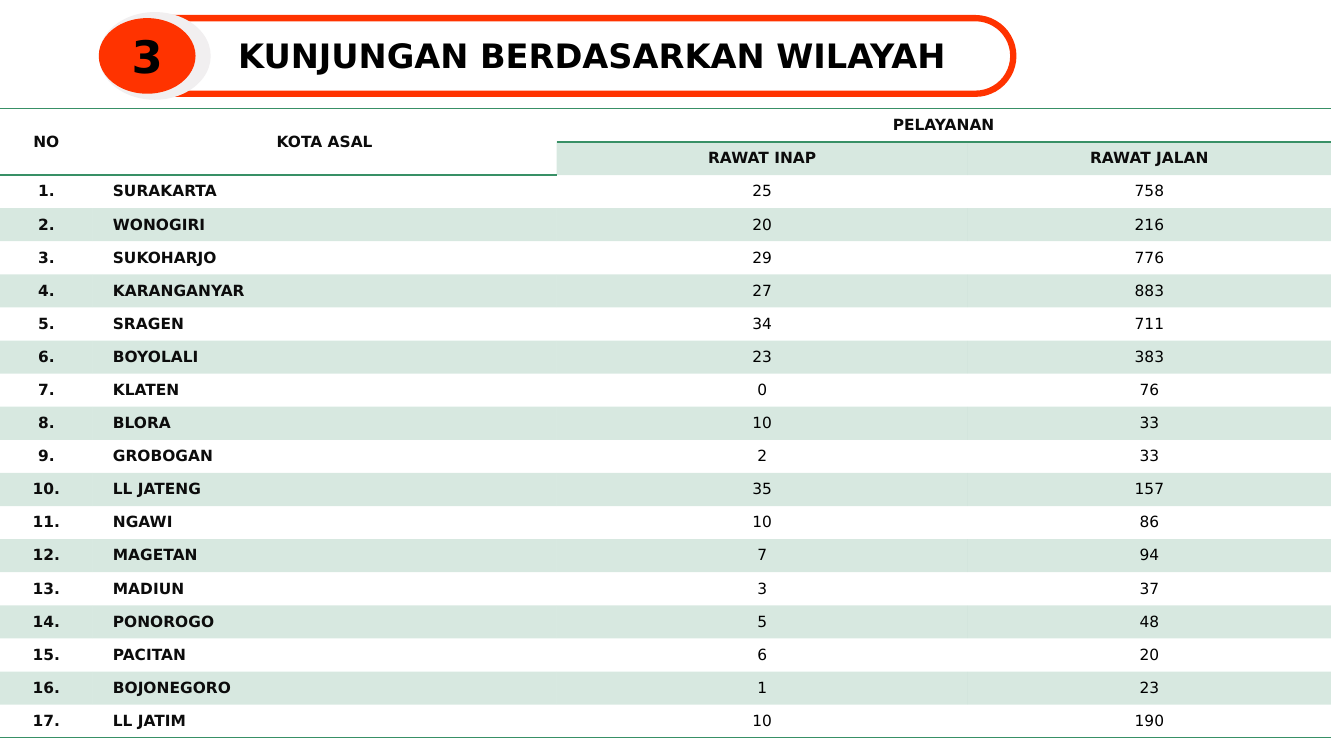
from lxml import etree
from pptx import Presentation, util as u
from pptx.dml.color import RGBColor
from pptx.enum import shapes, text
from pptx.oxml import ns

HUES = {"ink": "0C0C0C", "black": "000000", "green": "389066",
        "red": "FF3300", "pale": "F1EFF0"}
PLAIN = "{2D5ABB26-0587-4C30-8999-92F81FD0307C}"
MID = text.PP_ALIGN.CENTER
LEFT = text.PP_ALIGN.LEFT
HEAD = [["NO", "KOTA ASAL", "PELAYANAN", ""],
        ["", "", "RAWAT INAP", "RAWAT JALAN"]]
TOWNS = [
    ("SURAKARTA", 25, 758), ("WONOGIRI", 20, 216), ("SUKOHARJO", 29, 776),
    ("KARANGANYAR", 27, 883), ("SRAGEN", 34, 711), ("BOYOLALI", 23, 383),
    ("KLATEN", 0, 76), ("BLORA", 10, 33), ("GROBOGAN", 2, 33),
    ("LL JATENG", 35, 157), ("NGAWI", 10, 86), ("MAGETAN", 7, 94),
    ("MADIUN", 3, 37), ("PONOROGO", 5, 48), ("PACITAN", 6, 20),
    ("BOJONEGORO", 1, 23), ("LL JATIM", 10, 190),
]


class Deck:
    face = "DejaVu Sans"

    def __init__(self):
        self.deck = Presentation()
        self.deck.slide_width = u.Inches(13.33)
        self.deck.slide_height = u.Inches(7.5)
        self.page = self.deck.slides.add_slide(self.deck.slide_layouts[5])

    def hue(self, name):
        return RGBColor.from_string(HUES[name])

    def put(self, item, **looks):
        for key, value in looks.items():
            setattr(item, key, value)

    def label(self, frame, words, size, hue="black", bold=True, align=MID):
        line = frame.paragraphs[0]
        line.alignment = align
        run = line.add_run()
        run.text = words
        self.put(run.font, name=self.face, size=u.Pt(size), bold=bold)
        run.font.color.rgb = self.hue(hue)
        return line

    def title(self, words, box):
        item = self.page.shapes.title
        self.put(item, **dict(zip(("left", "top", "width", "height"),
                                  map(u.Inches, box))))
        frame = item.text_frame
        self.put(frame, word_wrap=True, auto_size=text.MSO_AUTO_SIZE.NONE,
                 vertical_anchor=text.MSO_ANCHOR.BOTTOM)
        self.label(frame, words, 24).line_spacing = 0.9
        self.page.shapes._spTree.append(item._element)

    def shape(self, group, kind, box, fill=None, edge=None):
        item = group.shapes.add_shape(kind, *map(u.Inches, box))
        item.shadow.inherit = False
        if fill:
            item.fill.solid()
            item.fill.fore_color.rgb = self.hue(fill)
        else:
            item.fill.background()
        if edge:
            item.line.color.rgb = self.hue(edge)
            item.line.width = u.Pt(4.5)
        else:
            item.line.fill.background()
        return item

    def badge(self, words):
        group = self.page.shapes.add_group_shape()
        oval = shapes.MSO_SHAPE.OVAL
        pill = self.shape(group, shapes.MSO_SHAPE.ROUNDED_RECTANGLE,
                          (1.1, 0.18, 8.95, 0.75), edge="red")
        pill.adjustments[0] = 0.5
        self.shape(group, oval, (0.98, 0.12, 1.11, 0.87), "pale")
        disc = self.shape(group, oval, (0.98, 0.18, 0.96, 0.75), "red")
        disc.text_frame.vertical_anchor = text.MSO_ANCHOR.MIDDLE
        self.label(disc.text_frame, words, 32)

    def rule(self, cell, sides):
        props = cell._tc.get_or_add_tcPr()
        for spot, side in enumerate(sides):
            line = etree.Element(ns.qn("a:ln" + side), w=str(u.Pt(1)))
            fill = etree.SubElement(line, ns.qn("a:solidFill"))
            etree.SubElement(fill, ns.qn("a:srgbClr"), val=HUES["green"])
            props.insert(spot, line)

    def tint(self, cell):
        cell.fill.solid()
        cell.fill.fore_color.rgb = self.hue("green")
        tone = cell._tc.tcPr.find(".//" + ns.qn("a:srgbClr"))
        etree.SubElement(tone, ns.qn("a:alpha"), val="20000")

    def cell(self, cell, words, count, align):
        pads = (0, 0) if count else (0.2, 0.07)
        wide, high = map(u.Inches, pads)
        self.put(cell, margin_left=wide, margin_right=wide, margin_top=high,
                 margin_bottom=high, vertical_anchor=text.MSO_ANCHOR.MIDDLE)
        if words:
            self.label(cell.text_frame, words, 11,
                       "black" if count else "ink", not count, align)

    def table(self, rows, cols, box):
        frame = self.page.shapes.add_table(len(rows), len(cols),
                                           *map(u.Inches, box))
        grid = frame.table
        self.put(grid, first_row=False, horz_banding=False)
        grid._tbl.tblPr.find(ns.qn("a:tableStyleId")).text = PLAIN
        for col, wide in zip(grid.columns, cols):
            col.width = u.Inches(wide)
        for row in grid.rows:
            row.height = u.Inches(box[3] / len(rows))
        for r, row in enumerate(rows):
            for c, words in enumerate(row):
                cell = grid.cell(r, c)
                body = r > 1
                self.cell(cell, words, body and c > 1,
                          LEFT if body and c == 1 else MID)
                if r % 2 and (body or c > 1):
                    self.tint(cell)
                else:
                    cell.fill.background()
                if r == 0:
                    self.rule(cell, "TB")
                elif r == len(rows) - 1:
                    self.rule(cell, "B")
        for c in range(2):
            grid.cell(0, c).merge(grid.cell(1, c))
        grid.cell(0, 2).merge(grid.cell(0, 3))


def main():
    show = Deck()
    rows = HEAD + [[f"{n}.", town, str(stay), str(day)]
                   for n, (town, stay, day) in enumerate(TOWNS, 1)]
    show.table(rows, (0.92, 4.6, 4.08, 3.6), (0, 1.08, 13.2, 6.24))
    show.badge("3")
    show.title("KUNJUNGAN BERDASARKAN WILAYAH", (1.57, 0.05, 8.6, 0.75))
    show.deck.save("out.pptx")


if __name__ == "__main__":
    main()
